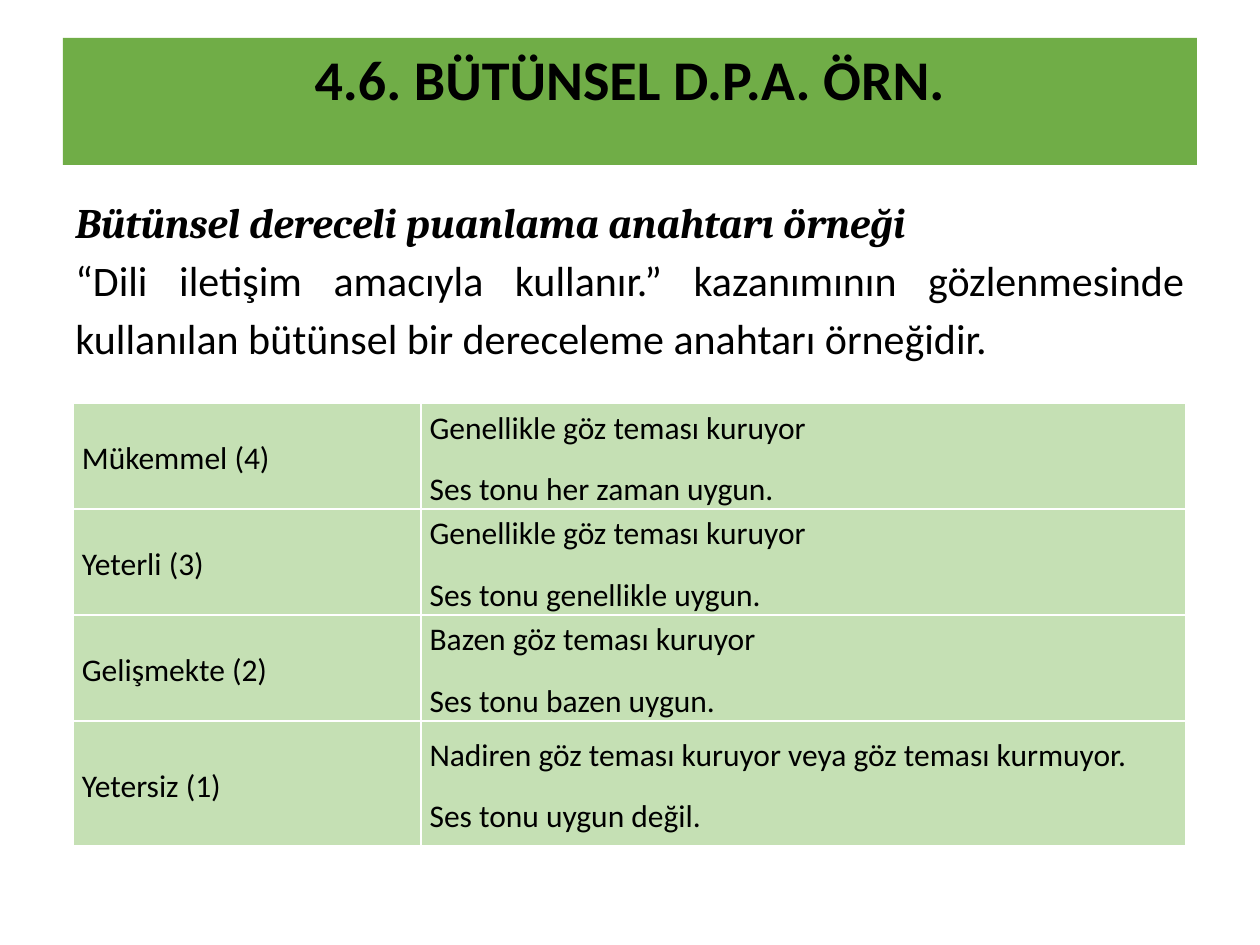
from lxml import etree
from pptx import Presentation
from pptx.dml.color import RGBColor
from pptx.enum.shapes import MSO_SHAPE
from pptx.enum.text import MSO_ANCHOR, MSO_AUTO_SIZE, PP_ALIGN
from pptx.oxml.ns import qn
from pptx.util import Inches, Pt

RECTANGLE = MSO_SHAPE.RECTANGLE
TOP, MIDDLE = MSO_ANCHOR.TOP, MSO_ANCHOR.MIDDLE
LEFT, CENTER, JUSTIFY = PP_ALIGN.LEFT, PP_ALIGN.CENTER, PP_ALIGN.JUSTIFY
FIT_SHAPE = MSO_AUTO_SIZE.SHAPE_TO_FIT_TEXT

GREEN, PALE_GREEN, BLACK, WHITE = "70AD47", "C5E0B4", "000000", "FFFFFF"


def color(hex_text):
    return RGBColor.from_string(hex_text)


def write(frame, lines):
    """Fill a text frame from (text, font values, paragraph values) lines."""
    for index, (text, font_values, para_values) in enumerate(lines):
        para = frame.paragraphs[0] if index == 0 else frame.add_paragraph()
        for name, value in para_values.items():
            setattr(para, name, value)
        span = para.add_run()
        span.text = text
        span.font.color.rgb = color(BLACK)
        for name, value in font_values.items():
            setattr(span.font, name, value)


deck = Presentation()
deck.slide_width, deck.slide_height = Inches(10), Inches(7.5)
page = deck.slides.add_slide(deck.slide_layouts[6])

# Title band
band = page.shapes.add_shape(RECTANGLE, Inches(0.5), Inches(0.3), Inches(9), Inches(1.01))
band.shadow.inherit = False
band.fill.solid()
band.fill.fore_color.rgb = color(GREEN)
band.line.fill.background()
band.text_frame.vertical_anchor = TOP
title_font = {"name": "Calibri", "size": Pt(32), "bold": True}
write(band.text_frame, [("4.6. BÜTÜNSEL D.P.A. ÖRN.", title_font, {"alignment": CENTER})])

# Rating scale table
levels = [
    ("Mükemmel (4)", ["Genellikle göz teması kuruyor", "Ses tonu her zaman uygun."]),
    ("Yeterli (3)", ["Genellikle göz teması kuruyor", "Ses tonu genellikle uygun."]),
    ("Gelişmekte (2)", ["Bazen göz teması kuruyor", "Ses tonu bazen uygun."]),
    ("Yetersiz (1)", ["Nadiren göz teması kuruyor veya göz teması kurmuyor.",
                      "Ses tonu uygun değil."]),
]
column_widths = [2.76, 6.07]
row_heights = [0.68, 0.68, 0.68, 0.99]
cell_font = {"name": "Calibri", "size": Pt(18), "bold": False}
cell_para = {"alignment": LEFT, "line_spacing": 1.15, "space_after": Pt(10)}
cell_format = {"vertical_anchor": MIDDLE, "margin_left": Inches(0.07),
               "margin_right": Inches(0.07), "margin_top": 0, "margin_bottom": 0}

table = page.shapes.add_table(len(levels), 2, Inches(0.58), Inches(3.2),
                              Inches(sum(column_widths)), Inches(sum(row_heights))).table
table.first_row = table.horz_banding = False
for column, width in zip(table.columns, column_widths):
    column.width = Inches(width)
for row, height, (level, criteria) in zip(table.rows, row_heights, levels):
    row.height = Inches(height)
    for cell, texts in zip(row.cells, ([level], criteria)):
        for name, value in cell_format.items():
            setattr(cell, name, value)
        write(cell.text_frame, [(text, cell_font, cell_para) for text in texts])
        # Borders come before the fill in the cell properties
        properties = cell._tc.get_or_add_tcPr()
        for side in ("a:lnL", "a:lnR", "a:lnT", "a:lnB"):
            border = etree.SubElement(properties, qn(side), w=str(Pt(1)))
            fill = etree.SubElement(border, qn("a:solidFill"))
            etree.SubElement(fill, qn("a:srgbClr"), val=WHITE)
        cell.fill.solid()
        cell.fill.fore_color.rgb = color(PALE_GREEN)

# Introduction
box = page.shapes.add_textbox(Inches(0.5), Inches(1.45), Inches(9), Inches(1.47))
box.text_frame.word_wrap = True
box.text_frame.auto_size = FIT_SHAPE
write(box.text_frame, [
    ("Bütünsel dereceli puanlama anahtarı örneği",
     {"name": "Cambria", "size": Pt(24), "bold": True, "italic": True},
     {"line_spacing": 1.15, "space_before": Pt(10)}),
    ("“Dili iletişim amacıyla kullanır.” kazanımının gözlenmesinde "
     "kullanılan bütünsel bir dereceleme anahtarı örneğidir.",
     {"name": "Calibri", "size": Pt(24)},
     {"alignment": JUSTIFY, "line_spacing": 1.15, "space_after": Pt(10)}),
])

deck.save("out.pptx")
